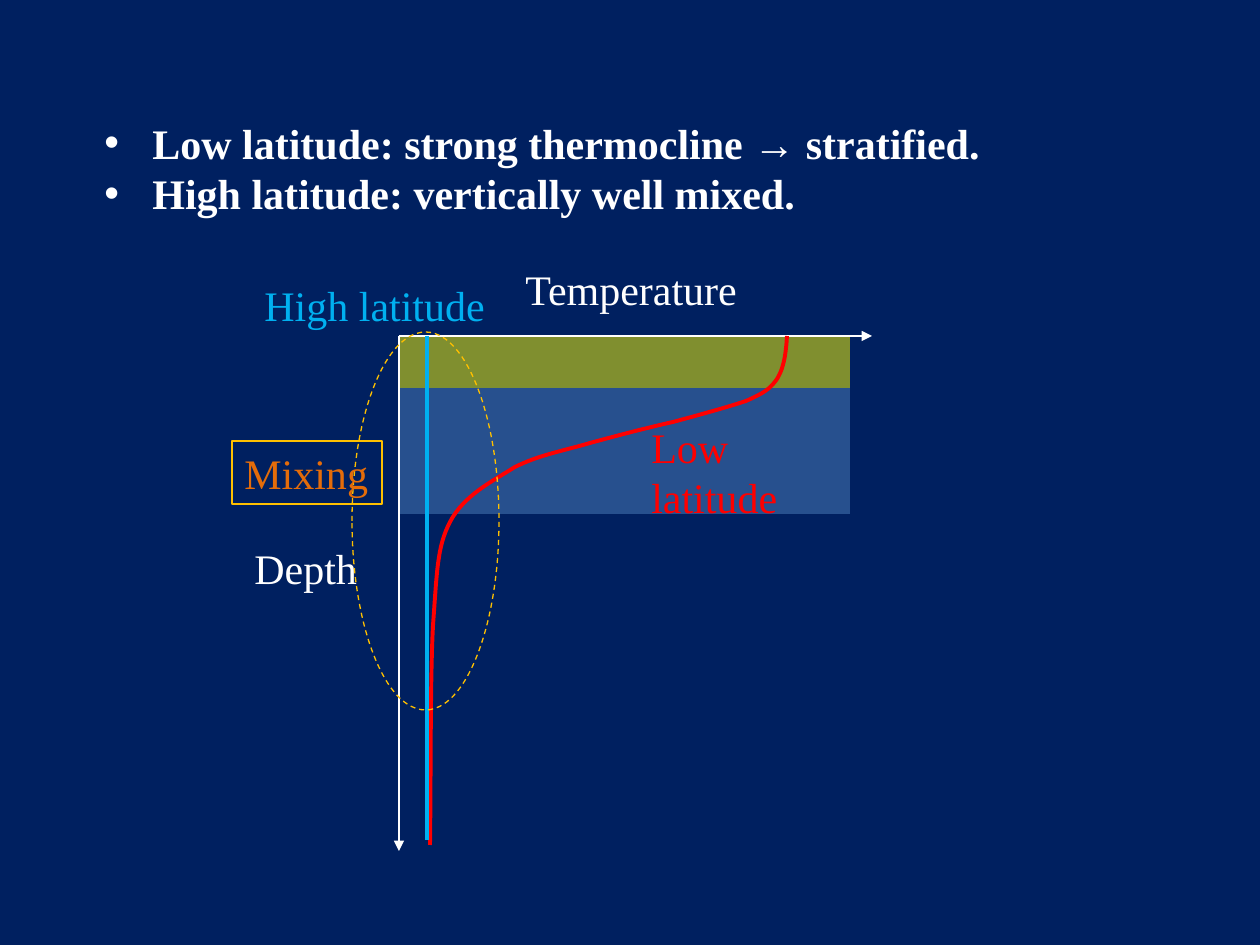
from typing import NamedTuple, Optional

from pptx import Presentation
from pptx.dml.color import RGBColor
from pptx.enum.dml import MSO_LINE_DASH_STYLE as Dash
from pptx.enum.shapes import MSO_CONNECTOR_TYPE as ConnectorType
from pptx.enum.shapes import MSO_SHAPE as ShapeType
from pptx.enum.text import MSO_AUTO_SIZE as AutoSize
from pptx.oxml.ns import qn
from pptx.util import Emu, Pt
from lxml.etree import SubElement

PX_PER_INCH = 126
WHITE, RED, CYAN, GOLD = "FFFFFF", "FF0000", "00B0F0", "FFC000"
FONT = {"name": "Times New Roman", "size": Pt(24)}
BULLET_INDENT = 48
STEPS_PER_SEGMENT = 16


class Layer(NamedTuple):
    top: int
    height: int
    color: str


class Label(NamedTuple):
    text: str
    left: int
    top: int
    width: int
    height: int
    color: str
    outline: Optional[str] = None


class Line(NamedTuple):
    start: tuple
    end: tuple
    color: str
    width: float
    arrow: bool = False


ORIGIN_X, SURFACE_Y = 399, 336
LAYER_WIDTH = 451
LAYERS = [Layer(SURFACE_Y, 52, "FFFF00"), Layer(388, 126, "4F81BD")]
AXES = [
    Line((ORIGIN_X, SURFACE_Y), (872, SURFACE_Y), WHITE, 0.75, True),
    Line((ORIGIN_X, SURFACE_Y), (ORIGIN_X, 851), WHITE, 0.75, True),
]
AXIS_LABELS = [
    Label("Depth", 242, 536, 131, 64, WHITE),
    Label("Temperature", 513, 257, 247, 64, WHITE),
]
PROFILE_LABELS = [
    Label("Low latitude", 639, 415, 238, 64, RED),
    Label("High latitude", 252, 273, 247, 64, CYAN),
]
MIXING_LABEL = Label("Mixing", 232, 441, 150, 63, "E46C0A", GOLD)
HIGH_LATITUDE = Line((427, SURFACE_Y), (427, 840), CYAN, 2.25)
MIXING_ZONE = (352, 332, 147, 378)
# Cubic curve: a start point, then two controls and an end for each segment.
LOW_LATITUDE = [
    (787, 336),
    (786, 353), (784, 368), (777, 379),
    (770, 389), (764, 393), (746, 401),
    (728, 407), (699, 415), (673, 422),
    (646, 428), (616, 436), (590, 443),
    (563, 451), (539, 455), (515, 467),
    (493, 481), (464, 495), (450, 522),
    (437, 547), (437, 572), (433, 626),
    (430, 680), (431, 799), (430, 845),
]
BULLETS = [
    "Low latitude: strong thermocline → stratified.",
    "High latitude: vertically well mixed.",
]


def px(value: float) -> Emu:
    return Emu(round(value * 914400 / PX_PER_INCH))


def rgb(color: str) -> RGBColor:
    return RGBColor.from_string(color)


def set_line(shape, color: str, width: float) -> None:
    shape.line.color.rgb = rgb(color)
    shape.line.width = Pt(width)


def add_text(paragraph, text: str, color: str, bold: bool = False) -> None:
    font = paragraph.add_run().font
    paragraph.runs[0].text = text
    for name, value in {**FONT, "bold": bold}.items():
        setattr(font, name, value)
    font.color.rgb = rgb(color)


def add_text_frame(slide, left: int, top: int, width: int, height: int):
    box = slide.shapes.add_textbox(px(left), px(top), px(width), px(height))
    box.text_frame.word_wrap = False
    box.text_frame.auto_size = AutoSize.SHAPE_TO_FIT_TEXT
    return box


def add_label(slide, label: Label) -> None:
    box = add_text_frame(slide, label.left, label.top, label.width, label.height)
    add_text(box.text_frame.paragraphs[0], label.text, label.color)
    if label.outline:
        set_line(box, label.outline, 0.75)


def add_bullets(slide, texts: list) -> None:
    frame = add_text_frame(slide, 92, 111, 907, 115).text_frame
    for index, text in enumerate(texts):
        paragraph = frame.add_paragraph() if index else frame.paragraphs[0]
        properties = paragraph._p.get_or_add_pPr()
        properties.set("marL", str(px(BULLET_INDENT)))
        properties.set("indent", str(-px(BULLET_INDENT)))
        SubElement(properties, qn("a:buFont")).set("typeface", "Arial")
        SubElement(properties, qn("a:buChar")).set("char", "•")
        add_text(paragraph, text, WHITE, bold=True)


def add_layer(slide, layer: Layer) -> None:
    """Draw a half-transparent water layer."""
    shape = slide.shapes.add_shape(
        ShapeType.RECTANGLE, px(ORIGIN_X), px(layer.top), px(LAYER_WIDTH), px(layer.height))
    shape.shadow.inherit = False
    shape.fill.solid()
    shape.fill.fore_color.rgb = rgb(layer.color)
    shape.line.fill.background()
    color = shape._element.spPr.find(qn("a:solidFill"))[0]
    SubElement(color, qn("a:alpha")).set("val", "50000")


def add_line(slide, line: Line) -> None:
    connector = slide.shapes.add_connector(
        ConnectorType.STRAIGHT, *map(px, line.start + line.end))
    set_line(connector, line.color, line.width)
    if line.arrow:
        SubElement(connector.line._get_or_add_ln(), qn("a:tailEnd")).set("type", "triangle")
    SubElement(connector._element.spPr, qn("a:effectLst"))


def curve_points(points: list) -> list:
    """Sample a chain of cubic Bézier segments."""
    samples = [points[0]]
    for first in range(0, len(points) - 1, 3):
        segment = points[first:first + 4]
        for step in range(1, STEPS_PER_SEGMENT + 1):
            t = step / STEPS_PER_SEGMENT
            weights = ((1 - t) ** 3, 3 * t * (1 - t) ** 2, 3 * t * t * (1 - t), t ** 3)
            samples.append(tuple(
                sum(weight * value for weight, value in zip(weights, axis))
                for axis in zip(*segment)))
    return samples


def add_curve(slide, points: list, color: str, width: float) -> None:
    start, *others = [(px(x), px(y)) for x, y in curve_points(points)]
    builder = slide.shapes.build_freeform(*start)
    builder.add_line_segments(others, close=False)
    shape = builder.convert_to_shape()
    shape.shadow.inherit = False
    shape.fill.background()
    set_line(shape, color, width)


def add_mixing_zone(slide) -> None:
    shape = slide.shapes.add_shape(ShapeType.OVAL, *map(px, MIXING_ZONE))
    shape.shadow.inherit = False
    shape.fill.background()
    set_line(shape, GOLD, 0.75)
    shape.line.dash_style = Dash.DASH


def main() -> None:
    presentation = Presentation()
    presentation.slide_width, presentation.slide_height = px(1260), px(945)
    slide = presentation.slides.add_slide(presentation.slide_layouts[6])
    slide.background.fill.solid()
    slide.background.fill.fore_color.rgb = rgb("002060")

    add_bullets(slide, BULLETS)
    for layer in LAYERS:
        add_layer(slide, layer)
    for axis in AXES:
        add_line(slide, axis)
    for label in AXIS_LABELS:
        add_label(slide, label)
    add_curve(slide, LOW_LATITUDE, RED, 2.25)
    for label in PROFILE_LABELS:
        add_label(slide, label)
    add_line(slide, HIGH_LATITUDE)
    add_mixing_zone(slide)
    add_label(slide, MIXING_LABEL)
    presentation.save("out.pptx")


if __name__ == "__main__":
    main()
